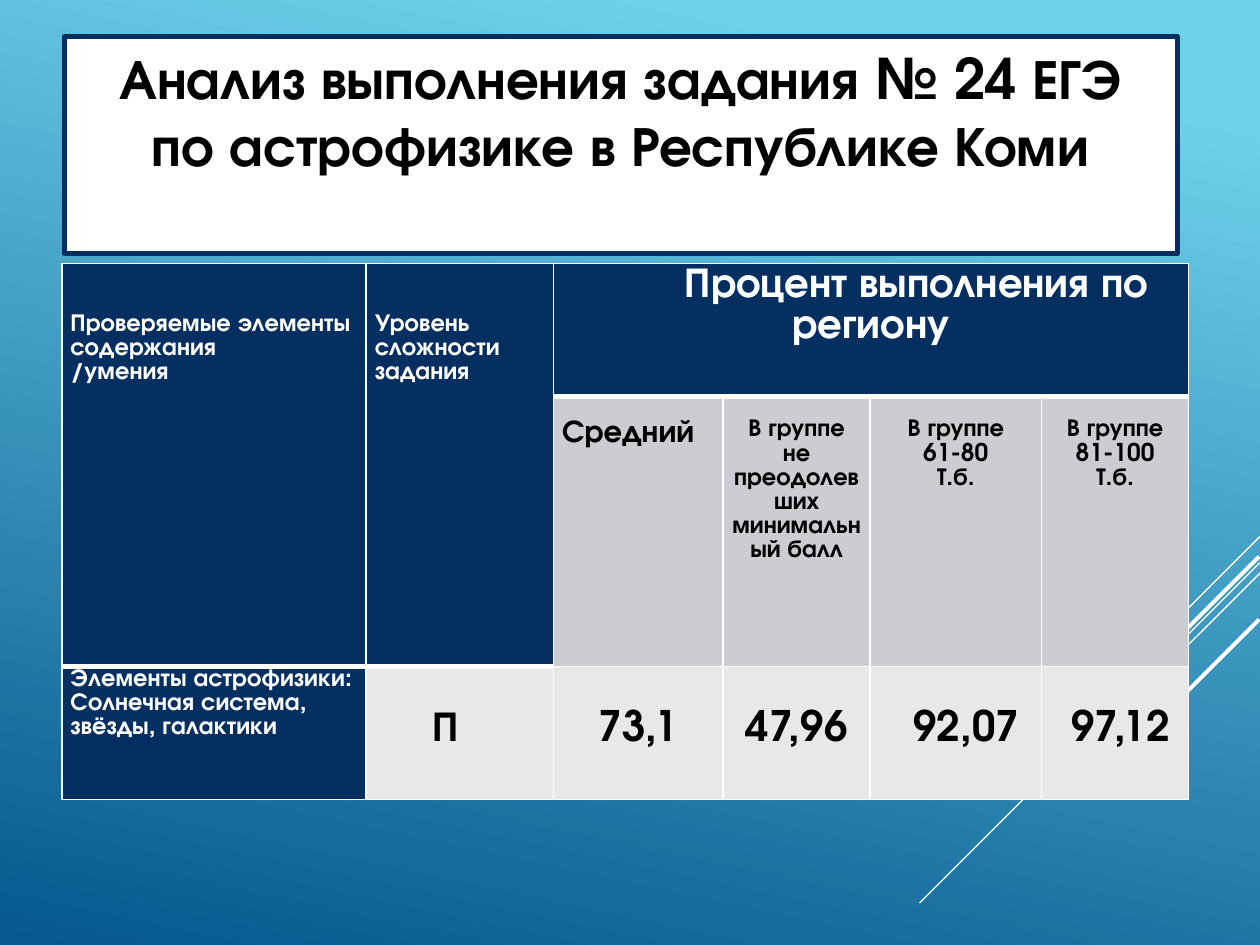
from lxml import etree
from pptx import Presentation
from pptx.dml.color import RGBColor
from pptx.enum.shapes import MSO_CONNECTOR
from pptx.enum.text import MSO_ANCHOR, MSO_AUTO_SIZE, PP_ALIGN
from pptx.oxml.ns import qn
from pptx.util import Pt

LEFT, CENTER = PP_ALIGN.LEFT, PP_ALIGN.CENTER
TOP = MSO_ANCHOR.TOP
NO_FIT = MSO_AUTO_SIZE.NONE
STRAIGHT = MSO_CONNECTOR.STRAIGHT
TITLE_ONLY = 5

FONT = "TeX Gyre Adventor"
NAVY, WHITE, BLACK = "052F61", "FFFFFF", "000000"
GRAY, PALE = "CCCDD2", "E7E8EA"


def rgb(value):
    return RGBColor.from_string(value)


def write(tf, text, size=14, color=BLACK, align=LEFT, spacing=1.07,
          left=0, first=0):
    """Fill a text frame, one paragraph for each line of text."""
    for i, line in enumerate(text.split("\n")):
        p = tf.paragraphs[0] if i == 0 else tf.add_paragraph()
        p.text = line
        p.alignment = align
        p.line_spacing = spacing
        p.space_before = p.space_after = Pt(0)
        pPr = p._p.get_or_add_pPr()
        pPr.set("marL", str(Pt(left)))
        pPr.set("indent", str(Pt(first)))
        for r in p.runs:
            r.font.name, r.font.size, r.font.bold = FONT, Pt(size), True
            r.font.color.rgb = rgb(color)


class SlideBuilder:
    def __init__(self, prs):
        self.s = prs.slides.add_slide(prs.slide_layouts[TITLE_ONLY])

    def background(self, stops, angle):
        fill = self.s.background.fill
        fill.gradient()
        fill.gradient_angle = angle
        for stop, (position, color) in zip(fill.gradient_stops, stops):
            stop.position = position
            stop.color.rgb = rgb(color)

    def line(self, x1, y1, x2, y2, width):
        c = self.s.shapes.add_connector(
            STRAIGHT, Pt(x1), Pt(y1), Pt(x2), Pt(y2))
        c.line.color.rgb = rgb(WHITE)
        c.line.width = Pt(width)
        etree.SubElement(c._element.spPr, qn("a:effectLst"))

    def title(self, text, x, y, w, h):
        sp = self.s.shapes.title
        sp.left, sp.top, sp.width, sp.height = Pt(x), Pt(y), Pt(w), Pt(h)
        sp.fill.solid()
        sp.fill.fore_color.rgb = rgb(WHITE)
        sp.line.color.rgb = rgb(NAVY)
        sp.line.width = Pt(3)
        tf = sp.text_frame
        tf.auto_size, tf.word_wrap, tf.vertical_anchor = NO_FIT, True, TOP
        write(tf, text, size=32, align=CENTER, spacing=1)

    def table(self, x, y, cols, rows):
        table = self.s.shapes.add_table(
            len(rows), len(cols), Pt(x), Pt(y),
            Pt(sum(cols)), Pt(sum(rows))).table
        for column, width in zip(table.columns, cols):
            column.width = Pt(width)
        for row, height in zip(table.rows, rows):
            row.height = Pt(height)
        return table

    def cell(self, cell, text, fill, top=0, bottom_line=1, **fmt):
        cell.margin_left = cell.margin_right = Pt(5)
        cell.margin_top, cell.margin_bottom = Pt(top), Pt(0)
        cell.vertical_anchor = TOP
        write(cell.text_frame, text, **fmt)
        self.borders(cell, bottom_line)
        cell.fill.solid()
        cell.fill.fore_color.rgb = rgb(fill)

    def borders(self, cell, bottom_line):
        tcPr = cell._tc.get_or_add_tcPr()
        for side, width in zip("LRTB", (1, 1, 1, bottom_line)):
            ln = etree.SubElement(tcPr, qn(f"a:ln{side}"), w=str(Pt(width)))
            solid = etree.SubElement(ln, qn("a:solidFill"))
            etree.SubElement(solid, qn("a:srgbClr"), val=WHITE)


def main():
    prs = Presentation()
    prs.slide_width, prs.slide_height = Pt(720), Pt(540)
    b = SlideBuilder(prs)
    b.background([(0.1, "6ED2EB"), (1, "06588E")], 258)

    # Diagonal rays: right end, drop to the lower left, width
    for x, y, drop, width in [(720, 306.5, 60, 0.75), (720, 321.5, 194.5, 0.75),
                              (720, 327.5, 124, 0.75), (719.5, 318, 113, 2.25),
                              (719.5, 354, 82, 2.25)]:
        b.line(x, y, x - drop, y + drop, width)

    b.title("Анализ выполнения задания № 24 ЕГЭ\v"
            "по астрофизике в Республике Коми", 36.7, 21, 636, 124)

    # Results table
    table = b.table(35.3, 150.5, [174, 107, 97, 84, 98, 84], [76, 154.5, 76])
    for first, last in [((0, 0), (1, 0)), ((0, 1), (1, 1)), ((0, 2), (0, 5))]:
        table.cell(*first).merge(table.cell(*last))

    # Header
    head = dict(fill=NAVY, color=WHITE, bottom_line=3)
    b.cell(table.cell(0, 0), "Проверяемые элементы\nсодержания\n/умения",
           top=27.8, **head)
    b.cell(table.cell(0, 1), "Уровень сложности\nзадания", top=27.8, **head)
    b.cell(table.cell(0, 2), "Процент выполнения по региону",
           size=24, align=CENTER, first=52, **head)
    for row_col in [(1, 0), (1, 1)]:
        b.borders(table.cell(*row_col), 3)

    # Groups
    b.cell(table.cell(1, 2), "Средний", GRAY, top=12, size=18)
    groups = ["В группе не преодолевших минимальный балл",
              "В группе\n61-80\nТ.б.", "В группе\n81-100\nТ.б."]
    for col, text in enumerate(groups, 3):
        b.cell(table.cell(1, col), text, GRAY, top=12, align=CENTER)

    # Results
    b.cell(table.cell(2, 0), "Элементы астрофизики:\n"
           "Солнечная система, звёзды, галактики", NAVY, color=WHITE)
    results = [("П", LEFT, 33), ("73,1", CENTER, 0), ("47,96", CENTER, 0),
               ("92,07", CENTER, 12), ("97,12", CENTER, 6)]
    for col, (text, align, left) in enumerate(results, 1):
        b.cell(table.cell(2, col), text, PALE, top=23.5, size=24,
               align=align, left=left)

    prs.save("out.pptx")


if __name__ == "__main__":
    main()
